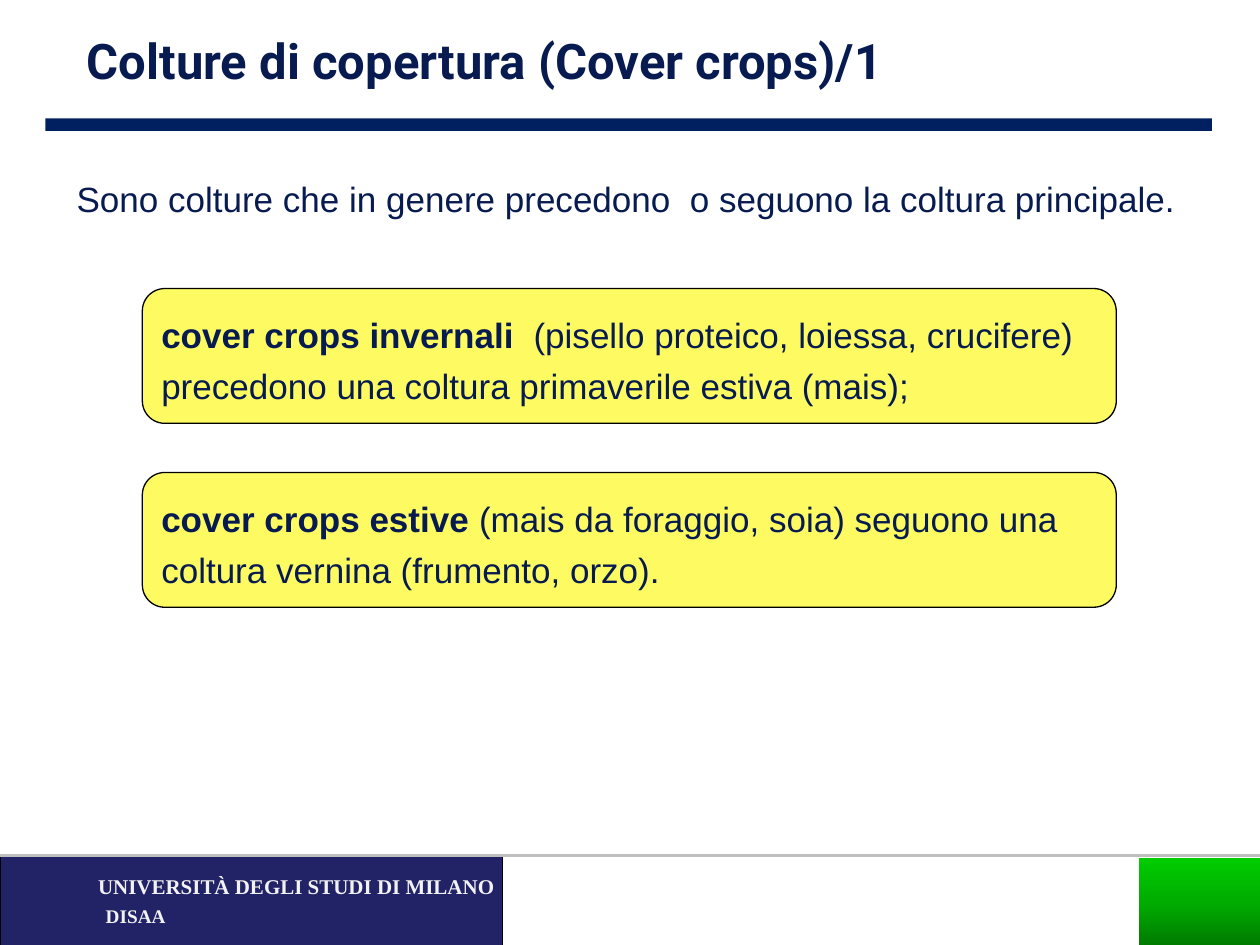
import copy
import pptx
import pptx.util
import pptx.dml.color
import pptx.enum.shapes
import pptx.enum.text
import pptx.oxml

Inches = pptx.util.Inches
SHAPE = pptx.enum.shapes.MSO_SHAPE
ANCHOR = pptx.enum.text.MSO_ANCHOR
NAVY = "071B50"


def paint(color, value):
    color.rgb = pptx.dml.color.RGBColor.from_string(value)


def write(shape, parts, size, font, value, space=1.2, anchor=ANCHOR.TOP):
    """Fill a shape with one left-aligned line made of (words, bold) parts."""
    frame = shape.text_frame
    frame.word_wrap = True
    frame.vertical_anchor = anchor
    para = frame.paragraphs[0]
    para.alignment = pptx.enum.text.PP_ALIGN.LEFT
    para.line_spacing = space
    for words, bold in parts:
        run = para.add_run()
        run.text = words
        run.font.size = pptx.util.Pt(size)
        run.font.name = font
        run.font.bold = bold
        paint(run.font.color, value)


deck = pptx.Presentation()
deck.slide_width, deck.slide_height = Inches(10), Inches(7.5)
slide = deck.slides.add_slide(deck.slide_layouts[5])
shapes = slide.shapes

# Footer band, title bar and the two yellow boxes
blocks = [
    (SHAPE.RECTANGLE, 0, 6.79, 3.99, 0.72, "222267", True, []),
    (SHAPE.RECTANGLE, 0.36, 0.94, 9.26, 0.1, "002060", False, []),
    (SHAPE.ROUNDED_RECTANGLE, 1.13, 2.29, 7.73, 1.07, "FEFA62", True, [
        ("cover crops invernali  ", True),
        ("(pisello proteico, loiessa, crucifere) precedono una coltura "
         "primaverile estiva (mais);", False)]),
    (SHAPE.ROUNDED_RECTANGLE, 1.13, 3.75, 7.73, 1.07, "FEFA62", True, [
        ("cover crops estive ", True),
        ("(mais da foraggio, soia) seguono una coltura vernina "
         "(frumento, orzo).", False)]),
]
for kind, left, top, width, height, fill, edge, parts in blocks:
    block = shapes.add_shape(kind, Inches(left), Inches(top),
                             Inches(width), Inches(height))
    block.shadow.inherit = False
    block.fill.solid()
    paint(block.fill.fore_color, fill)
    if edge:
        paint(block.line.color, "000000")
        block.line.width = pptx.util.Pt(0.75)
    else:
        block.line.fill.background()
    if parts:
        write(block, parts, 20, "Arial", NAVY, anchor=ANCHOR.MIDDLE)

# Footer rule
rule = shapes.add_connector(pptx.enum.shapes.MSO_CONNECTOR.STRAIGHT,
                            0, Inches(6.79), Inches(10), Inches(6.79))
paint(rule.line.color, "BFBFBF")
rule.line.width = pptx.util.Pt(2.25)
rule._element.spPr.append(pptx.oxml.parse_xml(
    '<a:effectLst xmlns:a='
    '"http://schemas.openxmlformats.org/drawingml/2006/main"/>'))

# Green corner, dark at the foot
green = shapes.add_shape(SHAPE.RECTANGLE, Inches(9.04), Inches(6.81),
                         Inches(0.97), Inches(0.71))
green.shadow.inherit = False
green.line.fill.background()
green.fill.gradient()
green.fill.gradient_angle = 90
first = green.fill.gradient_stops[0]._gs
first.addnext(copy.deepcopy(first))
for stop, place, value in zip(green.fill.gradient_stops, (0, 0.5, 1),
                              ("007900", "00AC00", "00CC00")):
    stop.position = place
    paint(stop.color, value)

# Footer names and opening sentence
texts = [
    (0.74, 7.09, 0.98, 0.37, "DISAA", 11, "Times New Roman", "F2F2F2", True),
    (0.68, 6.84, 3.53, 0.37, "UNIVERSITÀ DEGLI STUDI DI MILANO", 12,
     "Times New Roman", "F2F2F2", True),
    (0.51, 1.29, 8.94, 0.47,
     "Sono colture che in genere precedono  o seguono la coltura principale.",
     20, "Arial", NAVY, False),
]
for left, top, width, height, words, size, font, value, bold in texts:
    box = shapes.add_textbox(Inches(left), Inches(top),
                             Inches(width), Inches(height))
    write(box, [(words, bold)], size, font, value)

# Title
title = shapes.title
title.left, title.top = Inches(0.59), Inches(0.19)
title.width, title.height = Inches(8.74), Inches(0.57)
write(title, [("Colture di copertura (Cover crops)/1", True)], 28, "Roboto",
      NAVY, space=1.0)

deck.save("out.pptx")
